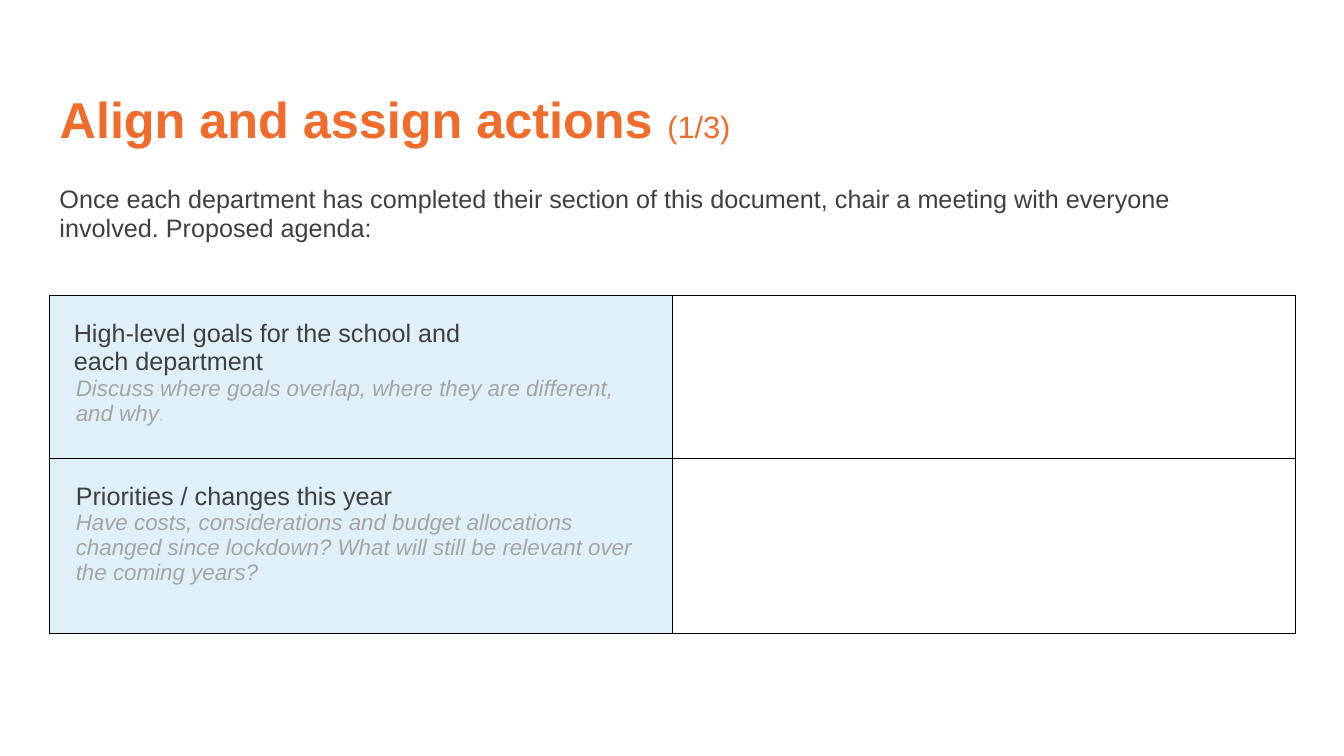
from lxml.etree import SubElement
from pptx import Presentation
from pptx.dml.color import RGBColor
from pptx.enum.text import MSO_ANCHOR, PP_ALIGN
from pptx.oxml.ns import qn
from pptx.util import Cm, Pt

COLORS = {
    "orange": "F16B2B",
    "text": "3F3F3F",
    "hint": "A5A5A5",
    "full_stop": "D2CFD4",
    "topic_fill": "E0F0F9",
    "notes_fill": "FFFFFF",
    "border": "000000",
}
AGENDA = [
    (3.99, "High-level goals for the school and \veach department", 0,
     "Discuss where goals overlap, where they are different, and why", "."),
    (4.42, "Priorities / changes this year", 0.05,
     "Have costs, considerations and budget allocations changed since lockdown? "
     "What will still be relevant over the coming years?", ""),
]


def style_run(run, size, color, bold=False, italic=False):
    """Apply the slide's font to one run."""
    run.font.name = "Arial"
    run.font.size = Pt(size)
    run.font.bold = bold
    run.font.italic = italic
    run.font.color.rgb = RGBColor.from_string(COLORS[color])


def style_paragraph(paragraph, size, color, indent=0, italic=False):
    """Format all runs of a left-aligned paragraph."""
    paragraph.alignment = PP_ALIGN.LEFT
    if indent:
        paragraph._p.get_or_add_pPr().set("marL", str(Cm(indent)))
    for run in paragraph.runs:
        style_run(run, size, color, italic=italic)


def add_title(slide, left, top, width, height):
    """Place the title with its page count."""
    title = slide.shapes.title
    title.left, title.top, title.width, title.height = map(Cm, (left, top, width, height))
    frame = title.text_frame
    frame.vertical_anchor = MSO_ANCHOR.MIDDLE
    frame.text = "Align and assign actions "
    heading = frame.paragraphs[0]
    heading.alignment = PP_ALIGN.LEFT
    heading.line_spacing = 0.9
    style_run(heading.runs[0], 36, "orange", bold=True)
    page_count = heading.add_run()
    page_count.text = "(1/3)"
    style_run(page_count, 22, "orange")


def add_introduction(slide, left, top, width, height):
    """Place the sentence that introduces the agenda."""
    frame = slide.shapes.add_textbox(*map(Cm, (left, top, width, height))).text_frame
    frame.word_wrap = True
    frame.text = ("Once each department has completed their section of this document, "
                  "chair a meeting with everyone involved. Proposed agenda:")
    frame.paragraphs[0].line_spacing = 0.95
    style_paragraph(frame.paragraphs[0], 18, "text")


def format_cell(cell, fill):
    """Give a cell its fill, margins and black borders."""
    cell.fill.solid()
    cell.fill.fore_color.rgb = RGBColor.from_string(COLORS[fill])
    cell.margin_left = cell.margin_right = Cm(0.61)
    cell.margin_top = cell.margin_bottom = Cm(0.61)
    properties = cell._tc.get_or_add_tcPr()
    for position, side in enumerate(("a:lnL", "a:lnR", "a:lnT", "a:lnB")):
        border = SubElement(properties, qn(side), w=str(Pt(0.75)))
        solid = SubElement(border, qn("a:solidFill"))
        SubElement(solid, qn("a:srgbClr"), val=COLORS["border"])
        properties.insert(position, border)


def add_agenda(slide, left, top, width):
    """Place the table of topics with empty cells for notes."""
    height = sum(item[0] for item in AGENDA)
    table = slide.shapes.add_table(
        len(AGENDA), 2, *map(Cm, (left, top, width, height))).table
    table.first_row = table.horz_banding = False
    for row, (row_height, topic, indent, hint, full_stop) in zip(table.rows, AGENDA):
        row.height = Cm(row_height)
        topic_cell, notes_cell = row.cells
        format_cell(topic_cell, "topic_fill")
        format_cell(notes_cell, "notes_fill")
        frame = topic_cell.text_frame
        frame.text = topic
        style_paragraph(frame.paragraphs[0], 18, "text", indent)
        hint_paragraph = frame.add_paragraph()
        hint_paragraph.text = hint
        style_paragraph(hint_paragraph, 16, "hint", 0.05, italic=True)
        if full_stop:
            ending = hint_paragraph.add_run()
            ending.text = full_stop
            style_run(ending, 16, "full_stop", italic=True)


def main():
    """Build and save the slide."""
    presentation = Presentation()
    presentation.slide_width = Cm(33.87)
    presentation.slide_height = Cm(19.05)
    slide = presentation.slides.add_slide(presentation.slide_layouts[5])
    left = 1.25
    add_title(slide, left, 1.25, 29.2, 3.68)
    add_introduction(slide, left, 4.55, 29.2, 1.63)
    add_agenda(slide, left, 7.45, 31.4)
    presentation.save("out.pptx")


if __name__ == "__main__":
    main()
